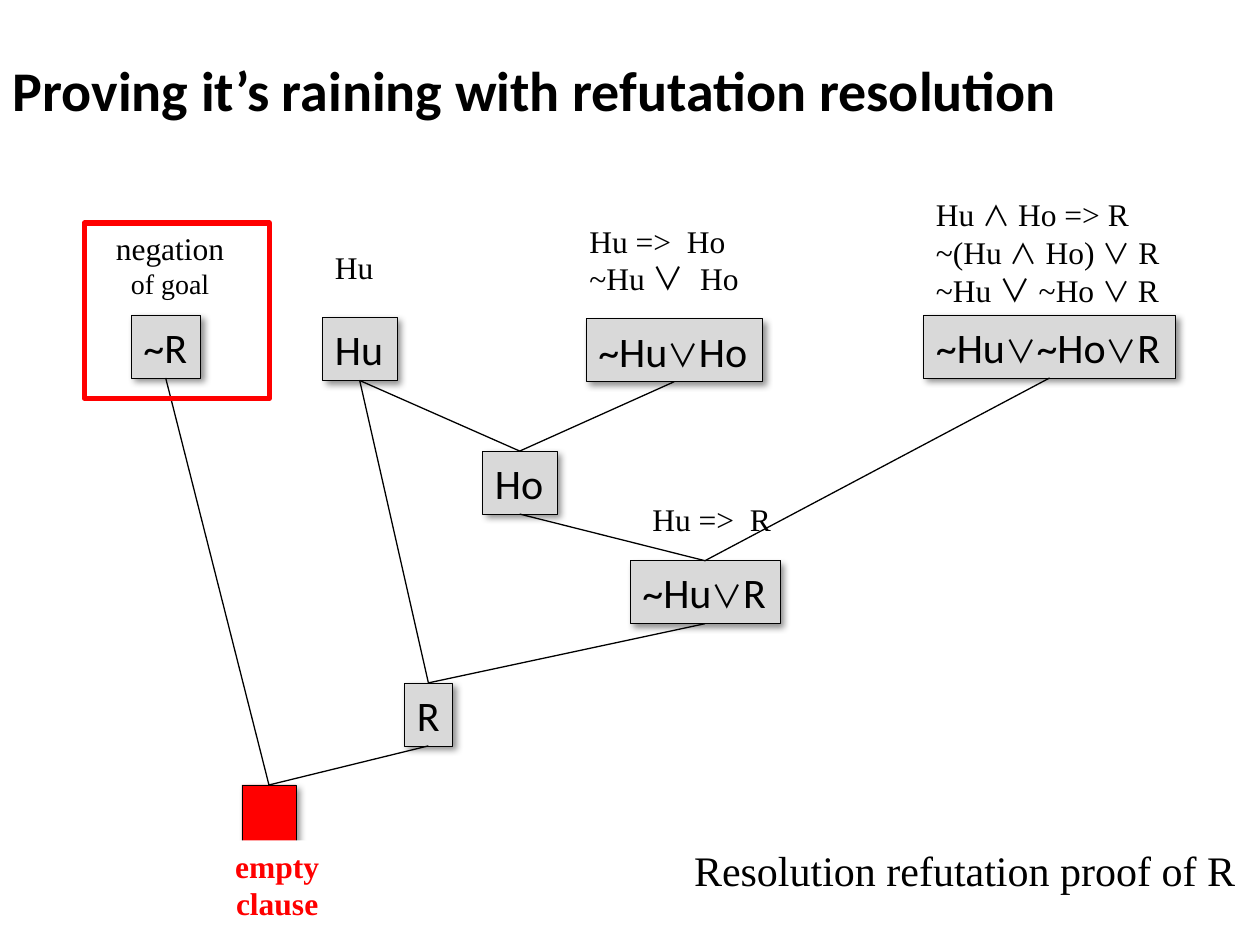
from dataclasses import dataclass
from itertools import groupby

import lxml.etree
import pptx
import pptx.dml.color
import pptx.enum.shapes
import pptx.enum.text
import pptx.oxml.ns
import pptx.util

Inches = pptx.util.Inches
PP_ALIGN = pptx.enum.text.PP_ALIGN
RECT = pptx.enum.shapes.MSO_SHAPE.RECTANGLE
qn = pptx.oxml.ns.qn
SANS, SERIF, SYMBOL = "Calibri", "Times New Roman", "Noto Sans CJK JP"
BLACK, RED, GREY, WHITE = "000000", "FF0000", "D9D9D9", "FFFFFF"
OPERATORS = "∨∧"


@dataclass
class Run:
    text: str
    size: int = 18
    font: str = SERIF


@dataclass
class Node:
    name: str
    text: str
    left: float
    top: float
    width: float
    fill: str = GREY


@dataclass
class Label:
    lines: list[list[Run]]
    box: tuple[float, float, float, float]
    wrap: bool = False
    align: PP_ALIGN = PP_ALIGN.LEFT
    color: str = BLACK
    bold: bool = False
    fill: str | None = None


def runs(text: str, size: int = 18, symbol_size: int = 16, font: str = SERIF) -> list[Run]:
    result = []
    for is_symbol, chars in groupby(text, lambda c: c in OPERATORS):
        part = "".join(chars)
        result.append(Run(part, symbol_size, SYMBOL) if is_symbol else Run(part, size, font))
    return result


NODES = [
    Node("not_r", "~R", 1.04, 2.5, 0.55),
    Node("hu", "Hu", 2.56, 2.52, 0.59),
    Node("hu_ho", "~Hu∨Ho", 4.65, 2.53, 1.4),
    Node("hu_ho_r", "~Hu∨~Ho∨R", 7.33, 2.5, 2),
    Node("ho", "Ho", 3.83, 3.58, 0.59),
    Node("hu_r", "~Hu∨R", 5, 4.45, 1.19),
    Node("r", "R", 3.21, 5.42, 0.38),
    Node("empty", "", 1.92, 6.23, 0.43, RED),
]

LINKS = [
    ("hu", "ho"), ("hu_ho", "ho"),
    ("hu_ho_r", "hu_r"), ("ho", "hu_r"),
    ("hu_r", "r"), ("hu", "r"),
    ("not_r", "empty"), ("r", "empty"),
]

LABELS = [
    Label([runs("Hu =>  Ho"), runs("~Hu ∨  Ho", symbol_size=18)], (4.58, 1.71, 1.4, 0.71)),
    Label([runs("Hu ∧ Ho => R"), runs("~(Hu ∧ Ho) ∨ R"),
           runs("~Hu ∨", symbol_size=18) + runs(" ~Ho ∨ R")],
          (7.33, 1.5, 2.35, 1.01), wrap=True),
    Label([runs("Hu")], (2.56, 1.92, 0.51, 0.4)),
    Label([runs("Hu =>  R")], (5.08, 3.92, 1.17, 0.4)),
    Label([runs("Resolution refutation proof of R", 24)], (5.41, 6.65, 4.62, 0.5)),
    Label([[Run("negation"), Run(" of goal", 16)]], (0.78, 1.77, 1.14, 0.67),
          wrap=True, align=PP_ALIGN.CENTER),
    Label([runs("empty"), runs("clause")], (1.63, 6.67, 1.14, 0.71), wrap=True,
          align=PP_ALIGN.CENTER, color=RED, bold=True, fill=WHITE),
]


def rgb(color: str) -> pptx.dml.color.RGBColor:
    return pptx.dml.color.RGBColor.from_string(color)


def paint(sp, color: str) -> None:
    sp.fill.solid()
    sp.fill.fore_color.rgb = rgb(color)


def outline(sp, color: str, width: float) -> None:
    sp.line.color.rgb = rgb(color)
    sp.line.width = pptx.util.Pt(width)


def style_run(r, size: int, font: str, color: str = BLACK, bold: bool = False) -> None:
    r.font.size = pptx.util.Pt(size)
    r.font.name = font
    r.font.bold = bold
    r.font.color.rgb = rgb(color)
    if font == SYMBOL:
        for tag in ("a:ea", "a:sym"):
            lxml.etree.SubElement(r.font._element, qn(tag), typeface=font)


def write(tf, lines: list[list[Run]], wrap: bool = False, align=PP_ALIGN.LEFT,
          color: str = BLACK, bold: bool = False) -> None:
    tf.word_wrap = wrap
    tf.auto_size = pptx.enum.text.MSO_AUTO_SIZE.SHAPE_TO_FIT_TEXT
    for i, line in enumerate(lines):
        p = tf.add_paragraph() if i else tf.paragraphs[0]
        p.alignment = align
        for run in line:
            r = p.add_run()
            r.text = run.text
            style_run(r, run.size, run.font, color, bold)


def add_shadow(sp) -> None:
    sp.shadow.inherit = False
    effects = sp._element.spPr.find(qn("a:effectLst"))
    shadow = lxml.etree.SubElement(effects, qn("a:outerShdw"), blurRad="50800",
                                   dist="38100", dir="2700000", algn="tl", rotWithShape="0")
    color = lxml.etree.SubElement(shadow, qn("a:srgbClr"), val=BLACK)
    lxml.etree.SubElement(color, qn("a:alpha"), val="43000")


def add_node(s, node: Node):
    sp = s.shapes.add_shape(RECT, Inches(node.left), Inches(node.top),
                            Inches(node.width), Inches(0.5))
    paint(sp, node.fill)
    outline(sp, BLACK, 0.25)
    add_shadow(sp)
    if node.text:
        write(sp.text_frame, [runs(node.text, 24, 18, SANS)])
    return sp


def add_link(s, parent, child) -> None:
    sp = s.shapes.add_connector(pptx.enum.shapes.MSO_CONNECTOR.STRAIGHT, 0, 0, 0, 0)
    sp.begin_connect(parent, 2)
    sp.end_connect(child, 0)
    outline(sp, BLACK, 0.75)
    lxml.etree.SubElement(sp._element.spPr, qn("a:effectLst"))


def add_label(s, label: Label) -> None:
    sp = s.shapes.add_textbox(*map(Inches, label.box))
    if label.fill:
        paint(sp, label.fill)
    write(sp.text_frame, label.lines, label.wrap, label.align, label.color, label.bold)


def add_title(s, text: str) -> None:
    sp = s.shapes.title
    sp.left, sp.top, sp.width, sp.height = map(Inches, (0, 0.32, 10.03, 1.25))
    tf = sp.text_frame
    tf.text = text
    tf.word_wrap = True
    tf.vertical_anchor = pptx.enum.text.MSO_ANCHOR.MIDDLE
    tf.margin_bottom = Inches(0.52)
    p = tf.paragraphs[0]
    p.alignment = PP_ALIGN.LEFT
    style_run(p.runs[0], 32, SANS, bold=True)


def add_goal_frame(s) -> None:
    sp = s.shapes.add_shape(RECT, *map(Inches, (0.67, 1.77, 1.47, 1.39)))
    sp.fill.background()
    outline(sp, RED, 3)
    sp.shadow.inherit = False


def main() -> None:
    prs = pptx.Presentation()
    prs.slide_width, prs.slide_height = Inches(10), Inches(7.5)
    s = prs.slides.add_slide(prs.slide_layouts[5])
    add_title(s, "Proving it’s raining with refutation resolution")
    nodes = {node.name: add_node(s, node) for node in NODES}
    for parent, child in LINKS:
        add_link(s, nodes[parent], nodes[child])
    for label in LABELS:
        add_label(s, label)
    add_goal_frame(s)
    prs.save("out.pptx")


if __name__ == "__main__":
    main()
